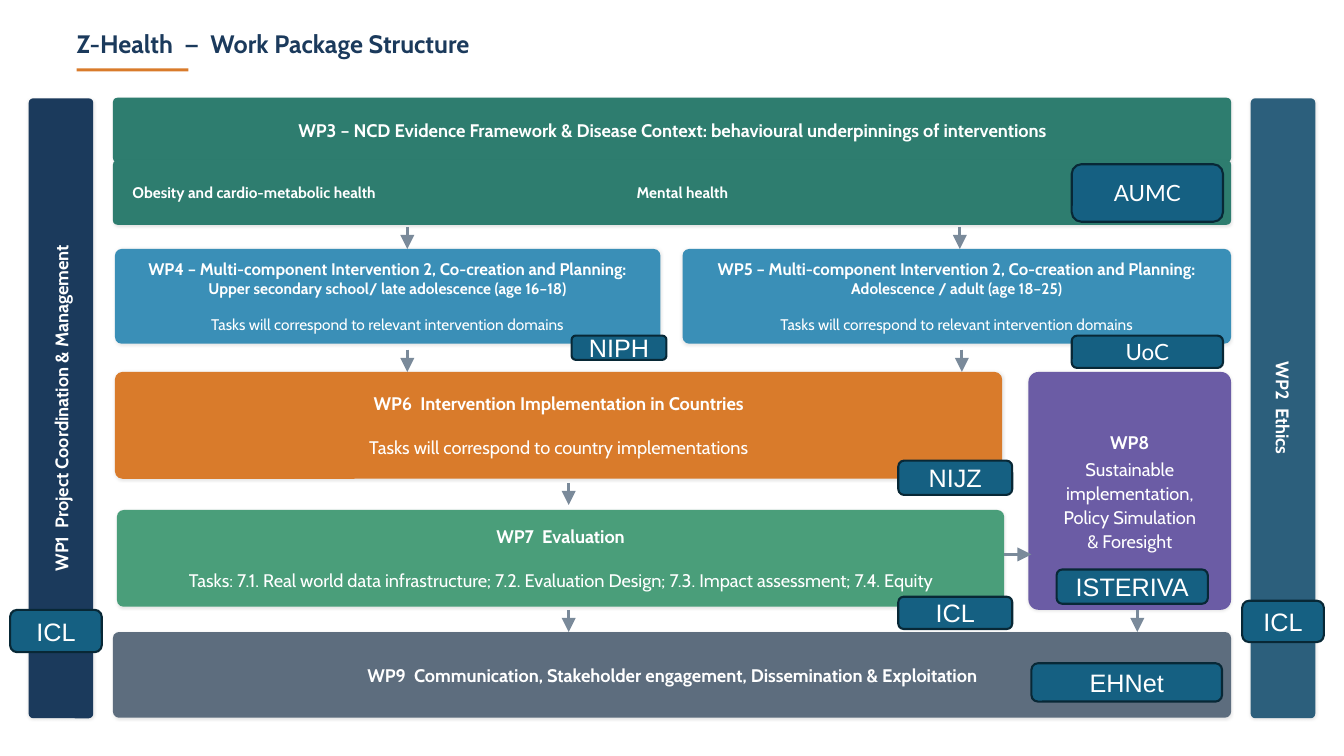
from lxml import etree
from pptx import Presentation
from pptx.dml.color import RGBColor
from pptx.enum.shapes import MSO_CONNECTOR as LINK, MSO_SHAPE as SHAPE
from pptx.enum.text import MSO_ANCHOR as ANCHOR, MSO_AUTO_SIZE as FIT, PP_ALIGN as ALIGN
from pptx.oxml import parse_xml
from pptx.oxml.ns import nsdecls, qn
from pptx.util import Inches, Pt

hue = RGBColor.from_string
SHADOW = (
    f'<a:effectLst {nsdecls("a")}><a:outerShdw blurRad="25400" dist="6350" dir="5400000" '
    'rotWithShape="0"><a:srgbClr val="000000"><a:alpha val="10000"/></a:srgbClr>'
    '</a:outerShdw></a:effectLst>'
)


def write(frame, lines, face, color="FFFFFF", align=ALIGN.CENTER, lead=None):
    """Fill a frame with lines of (text, size, bold, space before)."""
    for i, (text, size, bold, gap) in enumerate(lines):
        para = frame.add_paragraph() if i else frame.paragraphs[0]
        para.text = text
        para.alignment = align
        if gap:
            para.space_before = Pt(gap)
        if lead:
            para.line_spacing = lead
        run = para.runs[0]
        for key, val in dict(name=face, size=Pt(size), bold=bold).items():
            setattr(run.font, key, val)
        run.font.color.rgb = hue(color)


def panel(spot, fill, round_by, pad):
    """Add a rounded box without line or shadow; pad is (side, top) inset."""
    shape = slide.shapes.add_shape(SHAPE.ROUNDED_RECTANGLE, *map(Inches, spot))
    shape.adjustments[0] = round_by
    shape.shadow.inherit = False
    shape.fill.solid()
    shape.fill.fore_color.rgb = hue(fill)
    shape.line.fill.background()
    side, top = map(Inches, pad)
    form = dict(margin_left=side, margin_right=side, margin_top=top, margin_bottom=top,
                word_wrap=True, vertical_anchor=ANCHOR.MIDDLE)
    for key, val in form.items():
        setattr(shape.text_frame, key, val)
    return shape


deck = Presentation()
deck.slide_width, deck.slide_height = Inches(13.33), Inches(7.5)
slide = deck.slides.add_slide(deck.slide_layouts[5])

# Title and its underline
title = slide.shapes.title
title.left, title.top, title.width, title.height = map(Inches, (0.76, 0.19, 11.81, 0.39))
form = dict(margin_left=0, margin_right=0, margin_top=0, margin_bottom=0,
            auto_size=FIT.NONE, vertical_anchor=ANCHOR.BOTTOM)
for key, val in form.items():
    setattr(title.text_frame, key, val)
write(title.text_frame, [("Z-Health  —  Work Package Structure", 18, True, 0)],
      "Cabin", "1B3A5C", ALIGN.LEFT)

rule = slide.shapes.add_shape(SHAPE.RECTANGLE, *map(Inches, (0.76, 0.68, 1.11, 0.03)))
rule.shadow.inherit = False
rule.fill.solid()
rule.fill.fore_color.rgb = hue("D97B2B")
rule.line.fill.background()

# Work packages: place, fill, turn, lines
PLAN = "Multi-component Intervention 2, Co-creation and Planning:"
DOMAINS = ("Tasks will correspond to relevant intervention domains", 11, False, 13)
packs = [
    ((-2.47, 3.73, 6.15, 0.64), "1B3A5C", 270,
     [("WP1  Project Coordination & Management", 13, True, 0)]),
    ((9.65, 3.73, 6.15, 0.64), "2C5F7C", 90, [("WP2  Ethics", 13, True, 0)]),
    ((1.12, 0.97, 11.09, 0.64), "2E7D6F", 0,
     [("WP3 – NCD Evidence Framework & Disease Context: "
       "behavioural underpinnings of interventions", 13, True, 0)]),
    ((1.14, 2.47, 5.41, 0.94), "3A8FB7", 0,
     [(f"WP4 – {PLAN}", 12, True, 0),
      ("Upper secondary school/ late adolescence (age 16–18)", 11, True, 0), DOMAINS]),
    ((6.77, 2.47, 5.44, 0.94), "3A8FB7", 0,
     [(f"WP5 – {PLAN}", 12, True, 0),
      ("Adolescence / adult (age 18–25)", 11, True, 0), DOMAINS]),
    ((1.14, 3.69, 8.8, 1.06), "D97B2B", 0,
     [("WP6  Intervention Implementation in Countries", 13, True, 0),
      ("Tasks will correspond to country implementations", 13, False, 16)]),
    ((1.16, 5.06, 8.8, 0.96), "4A9E7A", 0,
     [("WP7  Evaluation", 13, True, 0),
      ("Tasks: 7.1. Real world data infrastructure; 7.2. Evaluation Design; "
       "7.3. Impact assessment; 7.4. Equity", 13, False, 16)]),
    ((1.12, 6.27, 11.09, 0.85), "5D6D7E", 0,
     [("WP9  Communication, Stakeholder engagement, Dissemination & Exploitation",
       13, True, 0)]),
]
cards = []
for spot, fill, turn, lines in packs:
    card = panel(spot, fill, 0.07, (0.06, 0.03))
    card.rotation = turn
    write(card.text_frame, lines, "Cabin")
    cards.append(card)

policy = panel((10.2, 3.69, 2.01, 2.36), "6B5CA5", 0.05, (0.04, 0.03))
write(policy.text_frame,
      [("WP8", 13, True, 0), ("Sustainable implementation,", 13, False, 2),
       ("Policy Simulation", 13, False, 0), ("& Foresight", 13, False, 0)],
      "Cabin", lead=1.1)

# Topic band under WP3, with a tab stop for the second topic
topics = panel((1.12, 1.59, 11.09, 0.64), "2E7D6F", 0.07, (0.18, 0.03))
props = topics.text_frame.paragraphs[0]._p.get_or_add_pPr()
tabs = etree.SubElement(props, qn("a:tabLst"))
etree.SubElement(tabs, qn("a:tab"), pos=str(Inches(5)), algn="l")
write(topics.text_frame,
      [("Obesity and cardio-metabolic health\tMental health", 11, True, 0)],
      "Cabin", align=ALIGN.LEFT)

for card in cards + [policy, topics]:
    props = card._element.spPr
    props.replace(props.find(qn("a:effectLst")), parse_xml(SHADOW))

# Arrows: start point, run across, run down
DROP = 0.22
arrows = [(4.04, 2.25, 0, DROP), (9.52, 2.25, 0, DROP), (4.04, 3.47, 0, DROP),
          (9.54, 3.47, 0, DROP), (5.64, 4.79, 0, DROP), (5.64, 6.05, 0, DROP),
          (11.28, 6.05, 0, DROP), (9.96, 5.5, 0.27, 0)]
for x, y, dx, dy in arrows:
    arrow = slide.shapes.add_connector(LINK.STRAIGHT, *map(Inches, (x, y, x + dx, y + dy)))
    arrow.line.width = Pt(2)
    arrow.line.color.rgb = hue("7A8A9A")
    etree.SubElement(arrow.line._get_or_add_ln(), qn("a:tailEnd"),
                     type="triangle", w="lg", len="lg")
    etree.SubElement(arrow._element.spPr, qn("a:effectLst"))

# Lead partner badges
badges = [
    ("ICL", (0.1, 6.05, 0.91, 0.42), 18, "Arial"),
    ("ISTERIVA", (10.48, 5.65, 1.5, 0.34), 18, "Arial"),
    ("ICL", (8.91, 5.92, 1.13, 0.32), 18, "Arial"),
    ("NIJZ", (8.91, 4.57, 1.13, 0.34), 18, "Arial"),
    ("EHNet", (10.23, 6.58, 1.89, 0.38), 18, "Arial"),
    ("NIPH", (5.67, 3.33, 0.94, 0.24), 18, "Arial"),
    ("UoC", (10.63, 3.33, 1.5, 0.32), 16, "Lato"),
    ("ICL", (12.32, 5.96, 0.81, 0.41), 18, "Arial"),
    ("AUMC", (10.63, 1.63, 1.5, 0.57), 16, "Lato"),
]
for name, spot, size, face in badges:
    badge = panel(spot, "156082", 0.167, (0.1, 0.05))
    badge.line.color.rgb = hue("082836")
    badge.line.width = Pt(1.5)
    write(badge.text_frame, [(name, size, False, 0)], face)

deck.save("out.pptx")
